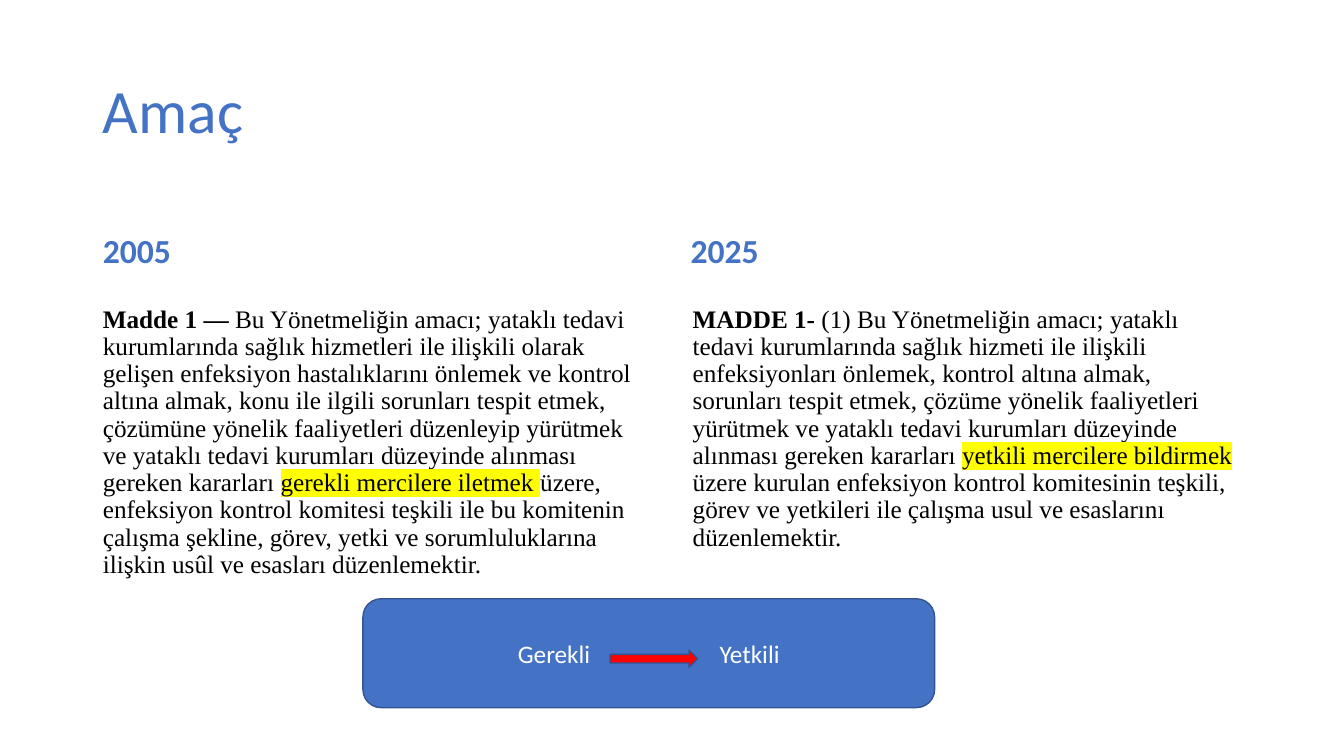
from pptx import Presentation
from pptx.dml.color import RGBColor
from pptx.enum.shapes import MSO_SHAPE as Shape
from pptx.enum.text import MSO_ANCHOR as Anchor, MSO_AUTO_SIZE as Fit, PP_ALIGN as Align
from pptx.oxml.ns import qn
from pptx.util import Inches, Pt
from lxml.etree import SubElement as Sub, Element

BLUE = RGBColor(0x44, 0x72, 0xC4)
NAVY = RGBColor(0x32, 0x54, 0x91)
RED = RGBColor(0xFF, 0x00, 0x00)
BLACK = RGBColor(0x00, 0x00, 0x00)
WHITE = RGBColor(0xFF, 0xFF, 0xFF)
YELLOW = RGBColor(0xFF, 0xFF, 0x00)
SERIF = "Times New Roman"

OLD = [
    ("Madde 1 — ", "bold"),
    ("Bu Yönetmeliğin amacı; yataklı tedavi kurumlarında sağlık hizmetleri ile "
     "ilişkili olarak gelişen enfeksiyon hastalıklarını önlemek ve kontrol altına "
     "almak, konu ile ilgili sorunları tespit etmek, çözümüne yönelik faaliyetleri "
     "düzenleyip yürütmek ve yataklı tedavi kurumları düzeyinde alınması gereken "
     "kararları ", ""),
    ("gerekli mercilere iletmek ", "mark"),
    ("üzere, enfeksiyon kontrol komitesi teşkili ile bu komitenin çalışma şekline, "
     "görev, yetki ve sorumluluklarına ilişkin usûl ve esasları düzenlemektir.", ""),
]
NEW = [
    ("MADDE 1- ", "bold"),
    ("(1) Bu Yönetmeliğin amacı; yataklı tedavi kurumlarında sağlık hizmeti ile "
     "ilişkili enfeksiyonları önlemek, kontrol altına almak, sorunları tespit etmek, "
     "çözüme yönelik faaliyetleri yürütmek ve yataklı tedavi kurumları düzeyinde "
     "alınması gereken kararları ", ""),
    ("yetkili mercilere bildirmek ", "mark"),
    ("üzere kurulan enfeksiyon kontrol komitesinin teşkili, görev ve yetkileri ile "
     "çalışma usul ve esaslarını düzenlemektir.", ""),
]


def mark(run):
    tag = Element(qn("a:highlight"))
    Sub(tag, qn("a:srgbClr"), val=str(YELLOW))
    run.font.fill._xPr.find(qn("a:solidFill")).addnext(tag)


def write(box, parts, size=18, font="Calibri", color=BLUE, align=Align.LEFT,
          anchor=Anchor.TOP, lead=0.9, before=0):
    frame = box.text_frame
    frame.word_wrap = True
    frame.auto_size = Fit.NONE
    frame.vertical_anchor = anchor
    para = frame.paragraphs[0]
    para.alignment = align
    para.line_spacing = lead
    para.space_before = Pt(before)
    for text, style in parts:
        run = para.add_run()
        run.text = text
        run.font.size = Pt(size)
        run.font.name = font
        run.font.bold = style == "bold"
        run.font.color.rgb = color
        if style == "mark":
            mark(run)
    return para


def place(box, left, top, width, height):
    box.left, box.top = Inches(left), Inches(top)
    box.width, box.height = Inches(width), Inches(height)


def plain(para):
    props = para._p.get_or_add_pPr()
    props.set("marL", "0")
    props.set("indent", "0")
    Sub(props, qn("a:buNone"))


def column(head, body, left, shift, width, year, parts):
    place(head, left, 1.84, width, 0.9)
    plain(write(head, [(year, "bold")], size=24, anchor=Anchor.BOTTOM, before=10))
    place(body, left + shift, 2.99, width, 4.03)
    plain(write(body, parts, font=SERIF, color=BLACK, before=10))


def block(slide, kind, left, top, width, height, fill):
    box = slide.shapes.add_shape(kind, Inches(left), Inches(top),
                                 Inches(width), Inches(height))
    box.shadow.inherit = False
    box.fill.solid()
    box.fill.fore_color.rgb = fill
    box.line.color.rgb = NAVY
    box.line.width = Pt(1)
    return box


def main():
    deck = Presentation()
    deck.slide_width, deck.slide_height = Inches(13.33), Inches(7.5)
    slide = deck.slides.add_slide(deck.slide_layouts.get_by_name("Comparison"))
    title, *spots = list(slide.placeholders)[:5]

    place(title, 0.92, 0.4, 11.5, 1.45)
    write(title, [("Amaç", "")], size=44, anchor=Anchor.MIDDLE)
    column(*spots[:2], 0.92, 0, 5.64, "2005", OLD)
    column(*spots[2:], 6.75, 0.02, 5.67, "2025", NEW)

    panel = block(slide, Shape.ROUNDED_RECTANGLE, 3.6, 5.94, 5.67, 1.08, BLUE)
    para = write(panel, [("Gerekli		Yetkili", "")], color=WHITE,
                 align=Align.CENTER, anchor=Anchor.MIDDLE, lead=1.0)
    para._p.get_or_add_pPr().set("defTabSz", str(Inches(1)))
    block(slide, Shape.RIGHT_ARROW, 6.05, 6.45, 0.87, 0.17, RED)

    deck.save("out.pptx")


if __name__ == "__main__":
    main()
